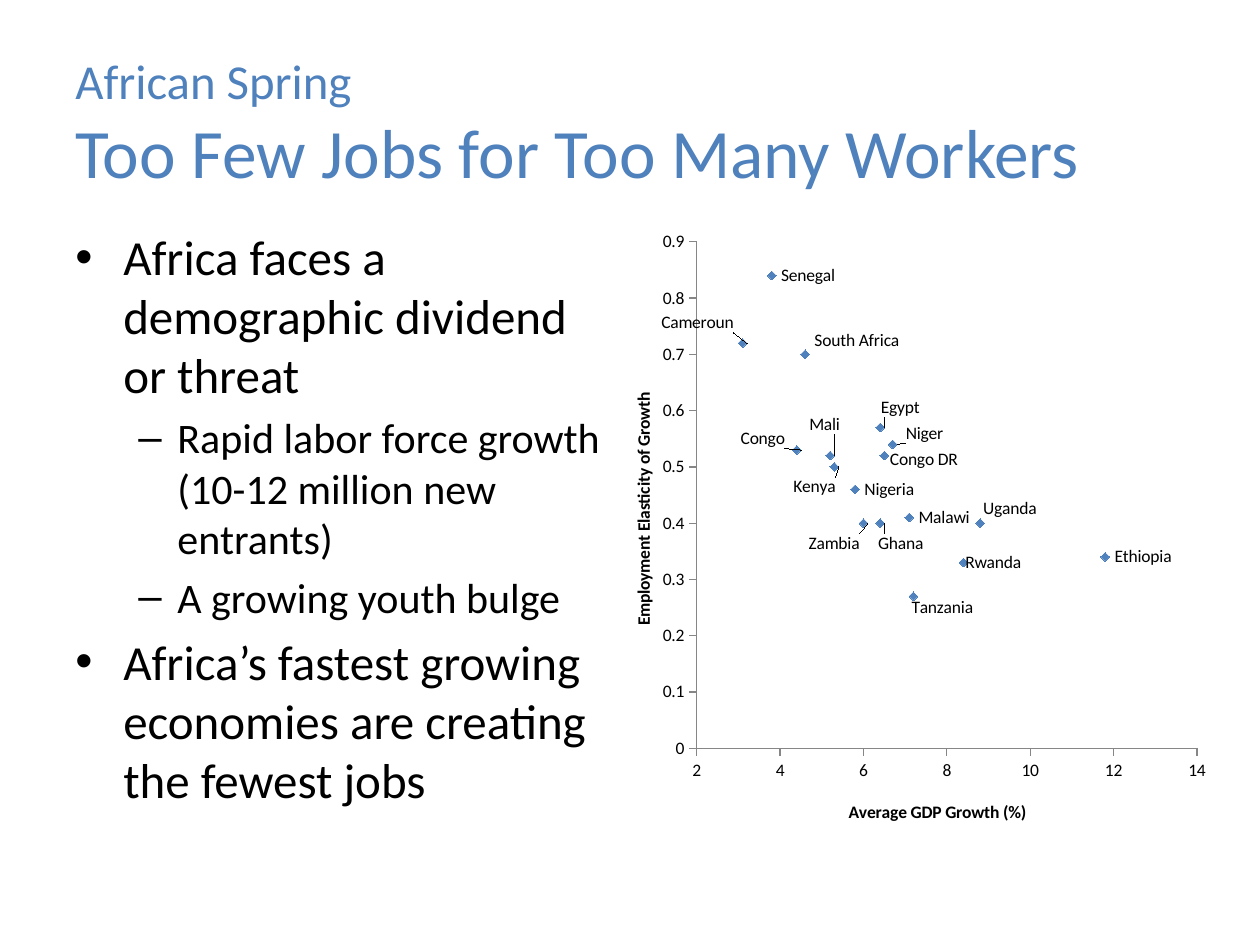
import pptx
import pptx.chart.data
import pptx.dml.color
import pptx.enum.chart
import pptx.enum.text
import pptx.oxml
import pptx.util
from pptx.util import Inches

FONT = "Calibri"
COLORS = {"accent": "4F81BD", "text": "000000", "axis": "868686"}

TITLE = [("African Spring", 27.9), ("Too Few Jobs for Too Many Workers", 39.6)]
BULLETS = [
    (0, "Africa faces a demographic dividend or threat"),
    (1, "Rapid labor force growth (10-12 million new entrants)"),
    (1, "A growing youth bulge"),
    (0, "Africa’s fastest growing economies are creating the fewest jobs"),
]
# Per level: bullet, size, left margin and hanging indent in inches
LEVELS = [("•", 28, 0.38, 0.38), ("–", 24, 0.81, 0.31)]

# Country, GDP growth, elasticity, label shift from the marker's right in inches
COUNTRIES = [
    ("Ethiopia", 11.8, 0.34, (0, 0)),
    ("Uganda", 8.8, 0.4, (-0.05, -0.12)),
    ("Rwanda", 8.4, 0.33, (-0.06, 0)),
    ("Tanzania", 7.2, 0.27, (-0.09, 0.09)),
    ("Malawi", 7.1, 0.41, (0, 0)),
    ("Niger", 6.7, 0.54, (0.03, -0.09)),
    ("Congo DR", 6.5, 0.52, (-0.03, 0.03)),
    ("Ghana", 6.4, 0.4, (-0.09, 0.16)),
    ("Egypt", 6.4, 0.57, (-0.07, -0.16)),
    ("Zambia", 6, 0.4, (-0.51, 0.16)),
    ("Nigeria", 5.8, 0.46, (0, 0)),
    ("Kenya", 5.3, 0.5, (-0.4, 0.16)),
    ("Mali", 5.2, 0.52, (-0.24, -0.25)),
    ("South Africa", 4.6, 0.7, (0, -0.11)),
    ("Congo", 4.4, 0.53, (-0.52, -0.09)),
    ("Senegal", 3.8, 0.84, (0, 0)),
    ("Cameroun", 3.1, 0.72, (-0.72, -0.16)),
]
CHART_W, CHART_H = 4.92, 4.95
# Positions inside the chart, in inches
PLOT_AREA = (0.78, 0.17, 3.97, 4.02)
X_TITLE_AT = (1.96, 4.58)
Y_TITLE_AT = (0.24, 1.34)


def rgb(name):
    return pptx.dml.color.RGBColor.from_string(COLORS[name])


def add_text(p, text, size, color="text", bold=False):
    r = p.add_run()
    r.text = text
    r.font.name, r.font.size, r.font.bold = FONT, pptx.util.Pt(size), bold
    r.font.color.rgb = rgb(color)


def add_box(s, left, top, width, height, anchor):
    tf = s.shapes.add_textbox(*map(Inches, (left, top, width, height))).text_frame
    tf.word_wrap = True
    tf.vertical_anchor = anchor
    return tf


def paragraphs(tf, count):
    return [tf.paragraphs[0]] + [tf.add_paragraph() for _ in range(count - 1)]


def set_bullet(p, char, left, hang):
    pPr = p._p.get_or_add_pPr()
    pPr.set("marL", str(Inches(left)))
    pPr.set("indent", str(-Inches(hang)))
    ns = pptx.oxml.ns.nsdecls("a")
    for xml in (
        f'<a:spcBef {ns}><a:spcPct val="20000"/></a:spcBef>',
        f'<a:buFont {ns} typeface="Arial"/>',
        f'<a:buChar {ns} char="{char}"/>',
    ):
        pPr.append(pptx.oxml.parse_xml(xml))


def layout_xml(x, y, w=None, h=None, edge=True):
    """Manual chart layout from inches; without edge, x and y are shifts."""
    parts = []
    if w:
        parts.append('<c:layoutTarget val="inner"/>')
    if edge:
        parts.append('<c:xMode val="edge"/><c:yMode val="edge"/>')
    sizes = (("x", x, CHART_W), ("y", y, CHART_H), ("w", w, CHART_W), ("h", h, CHART_H))
    parts += [f'<c:{tag} val="{v / full:.4f}"/>' for tag, v, full in sizes if v is not None]
    return pptx.oxml.parse_xml(
        f'<c:layout {pptx.oxml.ns.nsdecls("c")}><c:manualLayout>'
        f'{"".join(parts)}</c:manualLayout></c:layout>'
    )


def set_layout(element, layout, after=None):
    for old in element.xpath("c:layout"):
        element.remove(old)
    if after is None:
        element.insert(0, layout)
    else:
        element.xpath(after)[0].addnext(layout)


def format_axis(axis, title, title_at, low, high, step, number_format):
    axis.minimum_scale, axis.maximum_scale, axis.major_unit = low, high, step
    axis.has_major_gridlines = False
    axis.major_tick_mark = pptx.enum.chart.XL_TICK_MARK.OUTSIDE
    axis.minor_tick_mark = pptx.enum.chart.XL_TICK_MARK.NONE
    axis.tick_labels.number_format = number_format
    axis.tick_labels.number_format_is_linked = False
    axis.format.line.color.rgb = rgb("axis")
    axis.format.line.width = pptx.util.Pt(0.75)
    add_text(axis.axis_title.text_frame.paragraphs[0], title, 10, bold=True)
    set_layout(axis.axis_title._element, layout_xml(*title_at), after="c:tx")


def add_scatter(s):
    data = pptx.chart.data.XyChartData()
    points = data.add_series("Series 1")
    for _, growth, elasticity, _ in COUNTRIES:
        points.add_data_point(growth, elasticity)
    chart = s.shapes.add_chart(
        pptx.enum.chart.XL_CHART_TYPE.XY_SCATTER,
        Inches(4.75), Inches(1.75), Inches(CHART_W), Inches(CHART_H), data,
    ).chart
    chart.has_legend = chart.has_title = False
    chart.font.name, chart.font.size = FONT, pptx.util.Pt(10)
    chart.font.color.rgb = rgb("text")
    chart.plots[0].vary_by_categories = False
    set_layout(chart._chartSpace.xpath("c:chart/c:plotArea")[0], layout_xml(*PLOT_AREA))
    format_axis(chart.category_axis, "Average GDP Growth (%)", X_TITLE_AT, 2, 14, 2, "General")
    format_axis(chart.value_axis, "Employment Elasticity of Growth", Y_TITLE_AT,
                0, 0.9, 0.1, "General")

    series = chart.plots[0].series[0]
    series.smooth = False
    series.format.line.fill.background()
    series.marker.style = pptx.enum.chart.XL_MARKER_STYLE.DIAMOND
    series.marker.size = 5
    series.marker.format.fill.solid()
    series.marker.format.fill.fore_color.rgb = rgb("accent")
    series.marker.format.line.color.rgb = rgb("accent")
    for i, (country, _, _, _) in enumerate(COUNTRIES):
        label = series.points[i].data_label
        add_text(label.text_frame.paragraphs[0], country, 10)
        label.position = pptx.enum.chart.XL_LABEL_POSITION.RIGHT
    labels = series._element.xpath("c:dLbls/c:dLbl")
    for label, (_, _, _, shift) in zip(labels, COUNTRIES):
        if any(shift):
            set_layout(label, layout_xml(*shift, edge=False), after="c:idx")


def main():
    prs = pptx.Presentation()
    prs.slide_width, prs.slide_height = Inches(10), Inches(7.5)
    s = prs.slides.add_slide(prs.slide_layouts[6])

    tf = add_box(s, 0.5, 0.34, 9, 1.25, pptx.enum.text.MSO_ANCHOR.MIDDLE)
    for p, (text, size) in zip(paragraphs(tf, len(TITLE)), TITLE):
        add_text(p, text, size, color="accent")

    tf = add_box(s, 0.5, 1.75, 4.42, 4.95, pptx.enum.text.MSO_ANCHOR.TOP)
    for p, (level, text) in zip(paragraphs(tf, len(BULLETS)), BULLETS):
        char, size, left, hang = LEVELS[level]
        p.level = level
        set_bullet(p, char, left, hang)
        add_text(p, text, size)

    add_scatter(s)
    prs.save("out.pptx")


if __name__ == "__main__":
    main()
